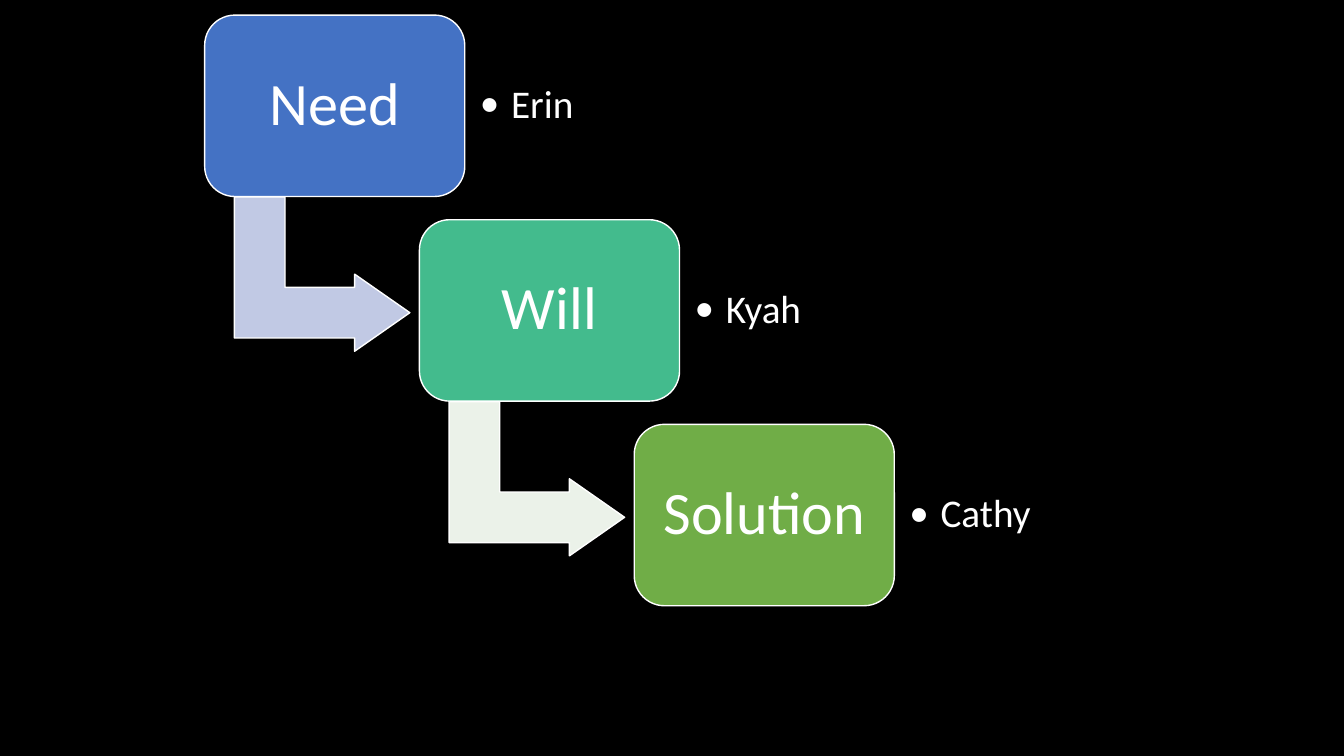
from lxml.etree import SubElement
from pptx import Presentation
from pptx.dml.color import RGBColor
from pptx.enum.shapes import MSO_SHAPE
from pptx.enum.text import MSO_ANCHOR, PP_ALIGN
from pptx.oxml.ns import qn
from pptx.util import Inches, Pt

COLORS = {
    "background": "000000",
    "white": "FFFFFF",
    "need": "4472C4",
    "will": "43BB8D",
    "solution": "70AD47",
    "need_arrow": "C1C9E4",
    "will_arrow": "EBF2E9",
}
FONT = "Calibri"
LEFT, TOP = 2.03, 0.15
COLUMN, ROW = 2.13, 2.03
BOX_WIDTH, BOX_HEIGHT = 2.58, 1.8
NAME_WIDTH, NAME_HEIGHT = 1.87, 1.46
ARROW_WIDTH, ARROW_HEIGHT = 1.53, 1.74
STEPS = [
    ("Need", "Erin", "need", "need_arrow"),
    ("Will", "Kyah", "will", "will_arrow"),
    ("Solution", "Cathy", "solution", None),
]


def color(name):
    return RGBColor.from_string(COLORS[name])


def add_filled_shape(slide, kind, left, top, width, height, fill):
    shape = slide.shapes.add_shape(
        kind, Inches(left), Inches(top), Inches(width), Inches(height))
    shape.shadow.inherit = False
    shape.fill.solid()
    shape.fill.fore_color.rgb = color(fill)
    shape.line.color.rgb = color("white")
    shape.line.width = Pt(1)
    return shape


def write_text(shape, text, size, inset, bullet=False):
    frame = shape.text_frame
    frame.word_wrap = True
    frame.vertical_anchor = MSO_ANCHOR.MIDDLE
    frame.margin_left = frame.margin_right = Inches(inset)
    frame.margin_top = frame.margin_bottom = Inches(inset)
    paragraph = frame.paragraphs[0]
    paragraph.alignment = PP_ALIGN.LEFT if bullet else PP_ALIGN.CENTER
    paragraph.line_spacing = 0.9
    if bullet:
        properties = paragraph._p.get_or_add_pPr()
        properties.set("marL", str(Inches(0.31)))
        properties.set("indent", str(-Inches(0.31)))
        SubElement(properties, qn("a:buFont")).set("typeface", FONT)
        SubElement(properties, qn("a:buChar")).set("char", "•")
    run = paragraph.add_run()
    run.text = text
    run.font.name = FONT
    run.font.size = Pt(size)
    run.font.color.rgb = color("white")


def add_arrow(slide, left, top, fill):
    arrow = add_filled_shape(slide, MSO_SHAPE.BENT_UP_ARROW, left + 0.4, top + 1.7,
                             ARROW_WIDTH, ARROW_HEIGHT, fill)
    arrow.rotation = 90
    for index, value in enumerate((0.328, 0.25, 0.358)):
        arrow.adjustments[index] = value


def add_step_box(slide, left, top, title, fill):
    box = add_filled_shape(slide, MSO_SHAPE.ROUNDED_RECTANGLE, left, top,
                           BOX_WIDTH, BOX_HEIGHT, fill)
    write_text(box, title, 43, 0.15)


def add_name(slide, left, top, name):
    label = slide.shapes.add_textbox(
        Inches(left + BOX_WIDTH), Inches(top + (BOX_HEIGHT - NAME_HEIGHT) / 2),
        Inches(NAME_WIDTH), Inches(NAME_HEIGHT))
    write_text(label, name, 28, 0.15, bullet=True)


def main():
    presentation = Presentation()
    presentation.slide_width = Inches(13.33)
    presentation.slide_height = Inches(7.5)
    slide = presentation.slides.add_slide(presentation.slide_layouts[6])
    slide.background.fill.solid()
    slide.background.fill.fore_color.rgb = color("background")
    for index, (title, name, fill, arrow_fill) in enumerate(STEPS):
        left = LEFT + index * COLUMN
        top = TOP + index * ROW
        if arrow_fill:
            add_arrow(slide, left, top, arrow_fill)
        add_step_box(slide, left, top, title, fill)
        add_name(slide, left, top, name)
    presentation.save("out.pptx")


if __name__ == "__main__":
    main()
